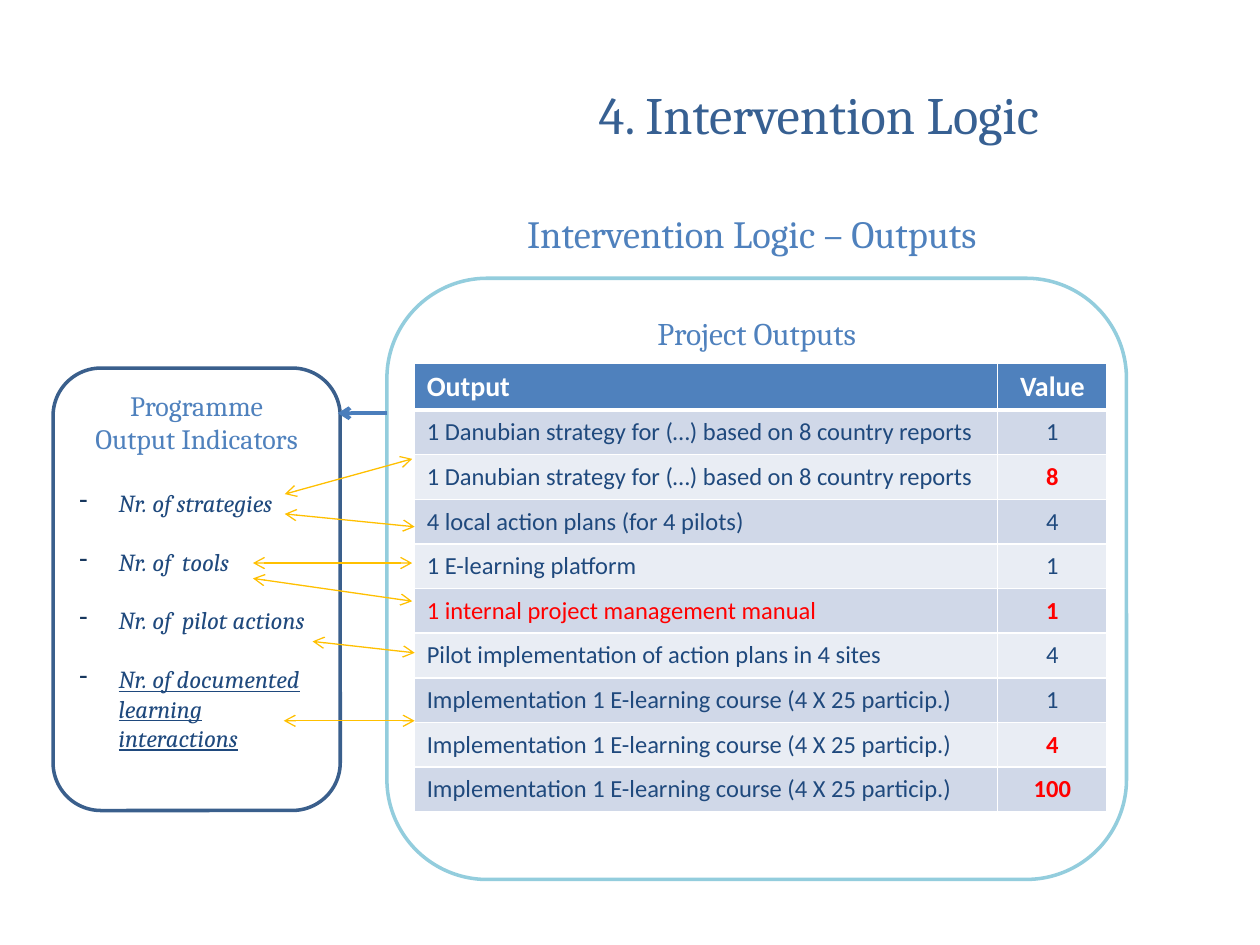
from lxml.etree import SubElement
from pptx import Presentation
from pptx.dml.color import RGBColor
from pptx.enum.shapes import MSO_CONNECTOR as Connector, MSO_SHAPE as Shape
from pptx.enum.text import MSO_ANCHOR as Anchor, PP_ALIGN as Align
from pptx.oxml.ns import qn
from pptx.util import Cm, Pt

COLORS = {
    "white": "FFFFFF", "title": "376092", "heading": "4F81BD", "text": "1F497D",
    "bullet": "17375E", "alert": "FF0000", "indicator_edge": "3A5F8C",
    "output_edge": "93CDDD", "flow": "4B7EBC", "link": "FFC000",
    "band_dark": "D0D8E8", "band_light": "E9EDF4",
}

INDICATORS = ["Nr. of strategies", "Nr. of  tools", "Nr. of  pilot actions",
              "Nr. of documented learning interactions"]

STRATEGY = "1 Danubian strategy for (…) based on 8 country reports"
COURSE = "Implementation 1 E-learning course (4 X 25 particip.)"
# Output, value, output highlighted, value highlighted
OUTPUTS = [
    (STRATEGY, "1", False, False),
    (STRATEGY, "8", False, True),
    ("4 local action plans (for 4 pilots)", "4", False, False),
    ("1 E-learning platform", "1", False, False),
    ("1 internal project management manual", "1", True, True),
    ("Pilot implementation of action plans in 4 sites", "4", False, False),
    (COURSE, "1", False, False),
    (COURSE, "4", False, True),
    (COURSE, "100", False, True),
]

# Start and end of each indicator-to-output link, in cm
LINKS = [
    (5.74, 9.96, 8.31, 9.25), (5.74, 10.36, 8.36, 10.62),
    (5.1, 11.35, 8.31, 11.35), (5.1, 11.66, 8.31, 12.12),
    (6.3, 12.93, 8.36, 13.16), (5.72, 14.53, 8.36, 14.53),
]


def rgb(name):
    return RGBColor.from_string(COLORS[name])


class SlideBuilder:
    heading_font = "Cambria"
    table_font = "Calibri"

    def __init__(self, slide):
        self.slide = slide
        self.shapes = slide.shapes

    def style(self, para, size, color, font=None, align=Align.CENTER,
              bold=False, italic=False, underline=False):
        para.alignment = align
        for span in para.runs:
            span.font.name = font or self.heading_font
            span.font.size = Pt(size)
            span.font.color.rgb = rgb(color)
            span.font.bold = bold
            span.font.italic = italic
            span.font.underline = underline

    def heading(self, text, left, top, width, height, size, color):
        box = self.shapes.add_textbox(Cm(left), Cm(top), Cm(width), Cm(height))
        box.text_frame.word_wrap = True
        box.text_frame.text = text
        self.style(box.text_frame.paragraphs[0], size, color)

    def panel(self, lines, left, top, width, height, edge, size):
        box = self.shapes.add_shape(Shape.ROUNDED_RECTANGLE, Cm(left), Cm(top),
                                    Cm(width), Cm(height))
        box.shadow.inherit = False
        box.fill.solid()
        box.fill.fore_color.rgb = rgb("white")
        fill_color = box.fill._xPr.find(qn("a:solidFill"))[0]
        SubElement(fill_color, qn("a:alpha"), val="63000")
        box.line.color.rgb = rgb(edge)
        box.line.width = Pt(2)
        frame = box.text_frame
        frame.word_wrap = True
        frame.vertical_anchor = Anchor.TOP
        frame.text = "\n".join(lines)
        for para in frame.paragraphs:
            self.style(para, size, "heading")
        return frame

    def bullet(self, frame, text, gap, underline=False):
        para = frame.add_paragraph()
        para.text = text
        para.space_before = Pt(gap)
        props = para._p.get_or_add_pPr()
        props.set("marL", str(Cm(0.79)))
        props.set("indent", str(-Cm(0.79)))
        tint = SubElement(props, qn("a:buClr"))
        SubElement(tint, qn("a:srgbClr"), val=COLORS["bullet"])
        SubElement(props, qn("a:buChar"), char="-")
        self.style(para, 14, "text", align=Align.LEFT, italic=True,
                   underline=underline)

    def arrow(self, x1, y1, x2, y2, color, width, both_ends=False):
        line = self.shapes.add_connector(Connector.STRAIGHT, Cm(x1), Cm(y1),
                                         Cm(x2), Cm(y2))
        line.line.color.rgb = rgb(color)
        line.line.width = Pt(width)
        outline = line.line._get_or_add_ln()
        for end in ("headEnd", "tailEnd") if both_ends else ("tailEnd",):
            SubElement(outline, qn(f"a:{end}"), type="arrow")
        SubElement(line._element.spPr, qn("a:effectLst"))

    def cell(self, cell, text, fill, size, color, align, bold,
             top=1, bottom=1):
        cell.vertical_anchor = Anchor.MIDDLE
        cell.text = text
        self.style(cell.text_frame.paragraphs[0], size, color,
                   font=self.table_font, align=align, bold=bold)
        # Borders go before the fill in the cell properties
        props = cell._tc.get_or_add_tcPr()
        for side, width in (("L", 1), ("R", 1), ("T", top), ("B", bottom)):
            border = SubElement(props, qn(f"a:ln{side}"), w=str(Pt(width)))
            paint = SubElement(border, qn("a:solidFill"))
            SubElement(paint, qn("a:srgbClr"), val=COLORS["white"])
        cell.fill.solid()
        cell.fill.fore_color.rgb = rgb(fill)

    def table(self, header, rows, left, top, widths, row_height):
        count = len(rows) + 1
        table = self.shapes.add_table(
            count, len(widths), Cm(left), Cm(top), Cm(sum(widths)),
            Cm(row_height * count)).table
        for column, width in zip(table.columns, widths):
            column.width = Cm(width)
        for row in table.rows:
            row.height = Cm(row_height)
        aligns = (Align.LEFT, Align.CENTER)
        for col, text in enumerate(header):
            self.cell(table.cell(0, col), text, "heading", 16, "white",
                      aligns[col], True, bottom=3)
        for index, (output, value, *alerts) in enumerate(rows, start=1):
            band = "band_dark" if index % 2 else "band_light"
            for col, text in enumerate((output, value)):
                self.cell(table.cell(index, col), text, band, 14,
                          "alert" if alerts[col] else "text", aligns[col],
                          bold=col == 1 and alerts[col],
                          top=3 if index == 1 else 1)


def main():
    deck = Presentation()
    deck.slide_width, deck.slide_height = Cm(25.4), Cm(19.05)
    page = SlideBuilder(deck.slides.add_slide(deck.slide_layouts[6]))

    # Programme indicators
    frame = page.panel(["Programme", "Output Indicators"], 1.07, 7.42, 5.79,
                       8.92, "indicator_edge", 16)
    for index, text in enumerate(INDICATORS):
        page.bullet(frame, text, gap=16.7 if index else 18.75,
                    underline=text == INDICATORS[-1])

    # Project outputs
    page.panel(["Project Outputs"], 7.8, 5.61, 14.91, 12.12, "output_edge", 18)
    page.arrow(7.8, 8.33, 6.81, 8.33, "flow", 2.25)
    page.table(["Output", "Value"], OUTPUTS, 8.35, 7.32, [11.76, 2.21], 0.9)

    # Links between indicators and outputs
    for link in LINKS:
        page.arrow(*link, "link", 0.75, both_ends=True)

    # Headings
    page.heading("Intervention Logic – Outputs", 7.85, 4.11, 14.61, 1.19, 22,
                 "heading")
    page.heading("4. Intervention Logic", 9.55, 1.52, 13.92, 1.6, 30, "title")

    deck.save("out.pptx")


if __name__ == "__main__":
    main()
